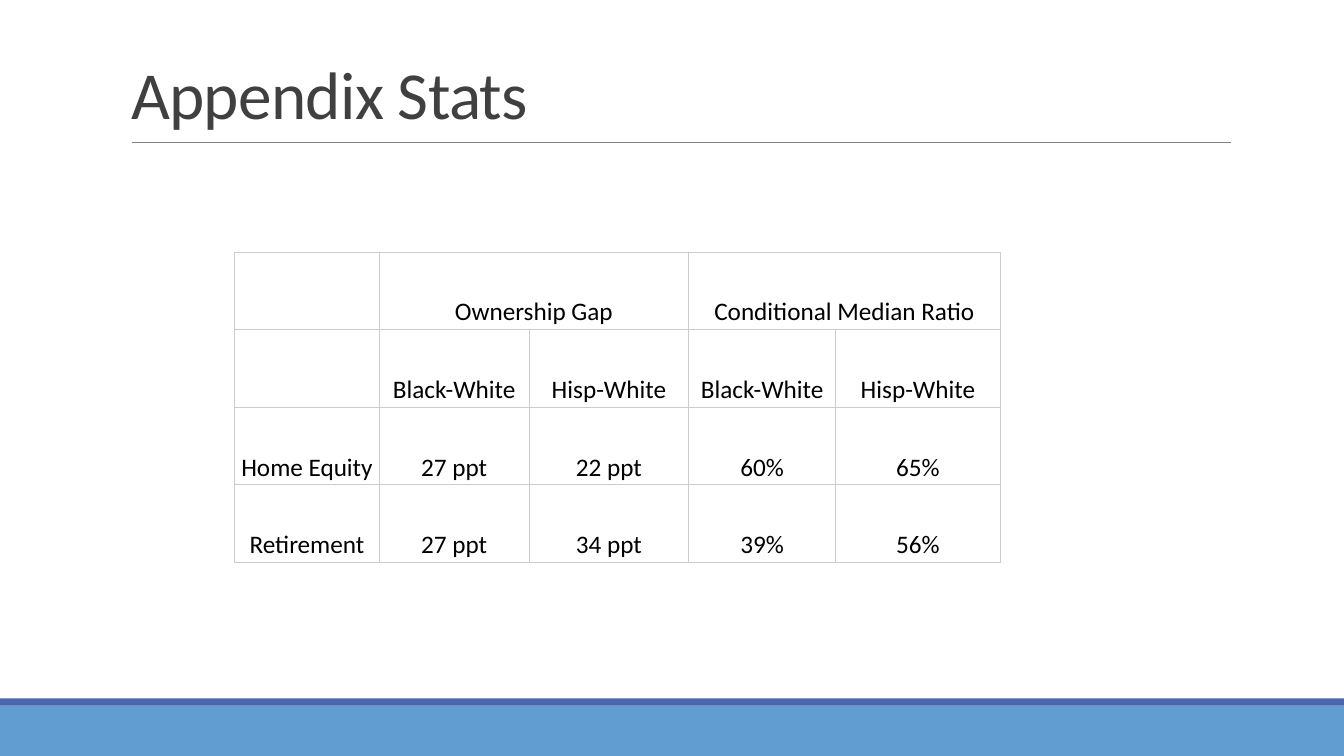
from lxml import etree
from pptx import Presentation
from pptx.dml.color import RGBColor
from pptx.enum.shapes import MSO_CONNECTOR, MSO_SHAPE
from pptx.enum.text import MSO_ANCHOR, MSO_AUTO_SIZE, PP_ALIGN
from pptx.oxml import parse_xml
from pptx.oxml.ns import nsdecls, qn
from pptx.util import Inches, Pt

STRAIGHT = MSO_CONNECTOR.STRAIGHT
RECTANGLE = MSO_SHAPE.RECTANGLE
BOTTOM = MSO_ANCHOR.BOTTOM
NO_AUTOFIT = MSO_AUTO_SIZE.NONE
LEFT, CENTER = PP_ALIGN.LEFT, PP_ALIGN.CENTER

FONT = "Calibri"
COLORS = {
    "footer": "629DD1",
    "footer_edge": "4A66AC",
    "rule": "808080",
    "title": "404040",
    "text": "000000",
    "border": "CCCCCC",
}
TITLE_ONLY = 5
SLIDE_WIDTH, SLIDE_HEIGHT = 13.33, 7.5

COLUMN_WIDTHS = [1.43, 1.49, 1.58, 1.46, 1.63]
ROW_HEIGHT = 0.77
ROWS = [
    ["", "Ownership Gap", "", "Conditional Median Ratio", ""],
    ["", "Black-White", "Hisp-White", "Black-White", "Hisp-White"],
    ["Home Equity", "27 ppt", "22 ppt", "60%", "65%"],
    ["Retirement", "27 ppt", "34 ppt", "39%", "56%"],
]
GROUP_COLUMNS = [1, 3]
CELL_FORMAT = {
    "vertical_anchor": BOTTOM,
    "margin_left": Inches(0.03),
    "margin_right": Inches(0.03),
    "margin_top": Inches(0.02),
    "margin_bottom": Inches(0.02),
}


def color(name):
    return RGBColor.from_string(COLORS[name])


def set_attributes(target, values):
    for name, value in values.items():
        setattr(target, name, value)


def format_font(font, size, color_name):
    set_attributes(font, {"name": FONT, "size": Pt(size)})
    font.color.rgb = color(color_name)


def add_band(slide, left, top, width, height, color_name):
    band = slide.shapes.add_shape(
        RECTANGLE, Inches(left), Inches(top), Inches(width), Inches(height))
    band.shadow.inherit = False
    band.fill.solid()
    band.fill.fore_color.rgb = color(color_name)
    band.line.fill.background()


def add_footer(slide, left, top, width, height):
    edge_height = 0.07
    add_band(slide, left, top + edge_height, width, height - edge_height, "footer")
    add_band(slide, left, top, width, edge_height, "footer_edge")


def add_title(slide, left, top, width, height):
    """Place the title and the thin rule below it."""
    title = slide.shapes.title
    set_attributes(title, {
        "left": Inches(left), "top": Inches(top),
        "width": Inches(width), "height": Inches(height),
    })
    frame = title.text_frame
    set_attributes(frame, {
        "vertical_anchor": BOTTOM, "auto_size": NO_AUTOFIT, "word_wrap": True})
    paragraph = frame.paragraphs[0]
    set_attributes(paragraph, {"alignment": LEFT, "line_spacing": 0.85})
    run = paragraph.add_run()
    run.text = "Appendix Stats"
    format_font(run.font, 48, "title")
    run._r.get_or_add_rPr().set("spc", "-50")

    rule_left, rule_top = left + 0.11, top + height + 0.04
    rule = slide.shapes.add_connector(
        STRAIGHT, Inches(rule_left), Inches(rule_top),
        Inches(rule_left + 10.9), Inches(rule_top))
    rule.line.color.rgb = color("rule")
    rule.line.width = Pt(0.5)
    etree.SubElement(rule._element.spPr, qn("a:effectLst"))


def add_borders(cell):
    properties = cell._tc.get_or_add_tcPr()
    for index, side in enumerate(["lnL", "lnR", "lnT", "lnB"]):
        properties.insert(index, parse_xml(
            f'<a:{side} {nsdecls("a")} w="{Pt(0.75)}"><a:solidFill>'
            f'<a:srgbClr val="{COLORS["border"]}"/></a:solidFill></a:{side}>'))


def add_stats_table(slide, left, top):
    table = slide.shapes.add_table(
        len(ROWS), len(COLUMN_WIDTHS), Inches(left), Inches(top),
        Inches(sum(COLUMN_WIDTHS)), Inches(ROW_HEIGHT * len(ROWS))).table
    set_attributes(table, {"first_row": False, "horz_banding": False})
    for column, width in zip(table.columns, COLUMN_WIDTHS):
        column.width = Inches(width)
    for row, texts in zip(table.rows, ROWS):
        row.height = Inches(ROW_HEIGHT)
        for cell, text in zip(row.cells, texts):
            set_attributes(cell, CELL_FORMAT)
            cell.fill.background()
            add_borders(cell)
            paragraph = cell.text_frame.paragraphs[0]
            paragraph.alignment = CENTER
            if text:
                run = paragraph.add_run()
                run.text = text
                format_font(run.font, 18, "text")
    for column in GROUP_COLUMNS:
        table.cell(0, column).merge(table.cell(0, column + 1))


def main():
    presentation = Presentation()
    presentation.slide_width = Inches(SLIDE_WIDTH)
    presentation.slide_height = Inches(SLIDE_HEIGHT)
    slide = presentation.slides.add_slide(presentation.slide_layouts[TITLE_ONLY])
    add_footer(slide, 0, 6.93, SLIDE_WIDTH, SLIDE_HEIGHT - 6.93)
    add_title(slide, 1.2, 0.31, 11, 1.06)
    add_stats_table(slide, 2.33, 2.5)
    presentation.save("out.pptx")


if __name__ == "__main__":
    main()
